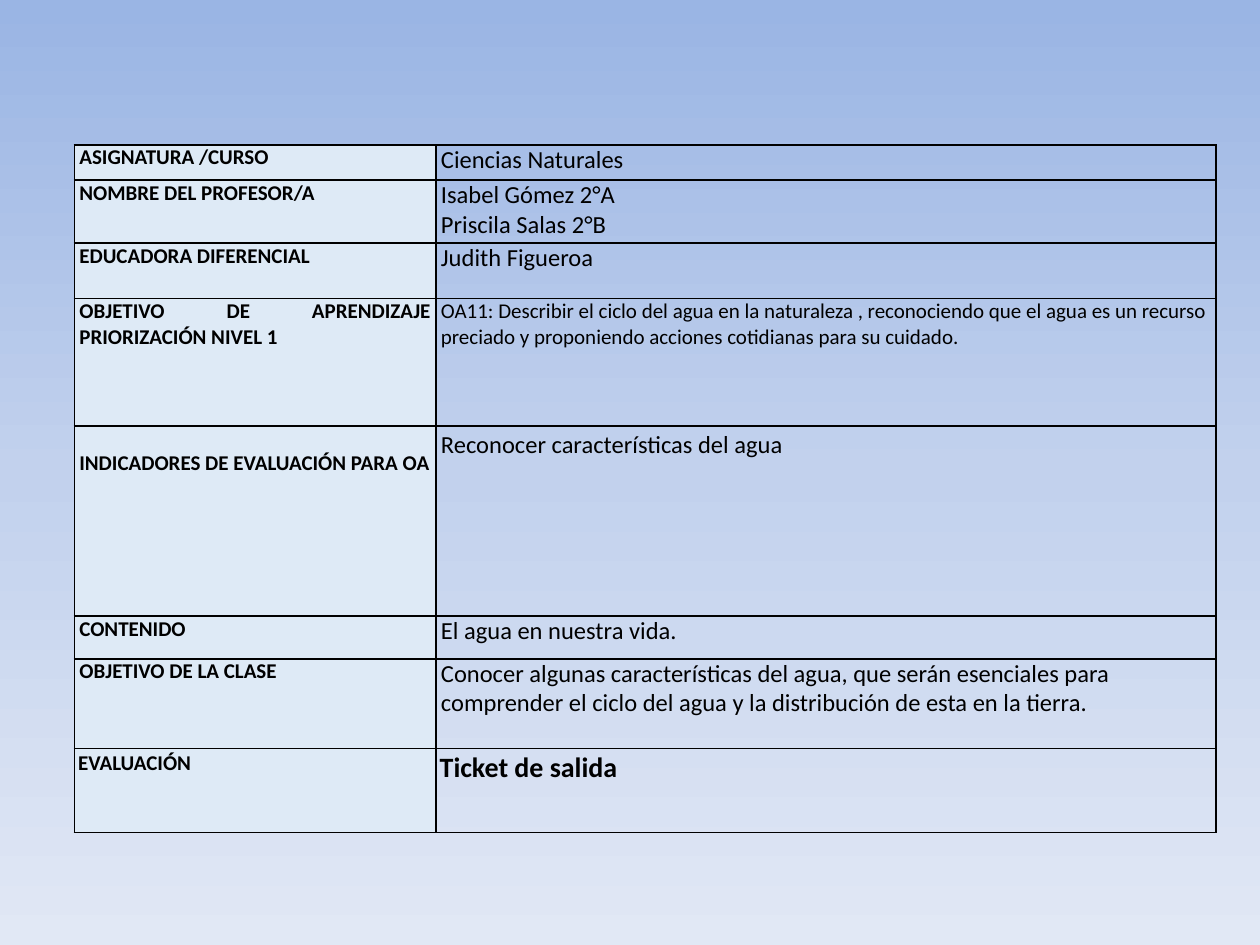
import copy

import pptx
import pptx.dml.color
import pptx.enum.text
import pptx.oxml
import pptx.oxml.ns
import pptx.util

Inches = pptx.util.Inches
JUSTIFY = pptx.enum.text.PP_ALIGN.JUSTIFY
LEFT = pptx.enum.text.PP_ALIGN.LEFT
FONT = "Calibri"
INK = "000000"
LABEL_FILL = "DEEAF6"
COLUMN_WIDTHS = (2.87, 6.19)

# Row height, label, lines of the answer, and what differs in the answer's style
ROWS = [
    (0.28, "ASIGNATURA /CURSO", ["Ciencias Naturales"], {}),
    (0.5, "NOMBRE DEL PROFESOR/A", ["Isabel Gómez 2°A", "Priscila Salas 2°B"], {}),
    (0.44, "EDUCADORA DIFERENCIAL", ["Judith Figueroa"], {}),
    (1.01, "OBJETIVO DE APRENDIZAJE PRIORIZACIÓN NIVEL 1",
     ["OA11: Describir el ciclo del agua en la naturaleza , reconociendo que el agua "
      "es un recurso preciado y proponiendo acciones cotidianas para su cuidado."],
     {"size": 12, "align": LEFT}),
    (1.51, "INDICADORES DE EVALUACIÓN PARA OA", ["Reconocer características del agua"],
     {"align": LEFT, "spacing": 1.15}),
    (0.34, "CONTENIDO", ["El agua en nuestra vida."], {}),
    (0.71, "OBJETIVO DE LA CLASE",
     ["Conocer algunas características del agua, que serán esenciales para "
      "comprender el ciclo del agua y la distribución de esta en la tierra."],
     {"align": LEFT}),
    (0.67, "EVALUACIÓN", ["Ticket de salida"], {"size": 16, "bold": True}),
]
# Cell margins (side, top of label, top of answer) where they are not the usual ones
USUAL_MARGINS = (0.04, 0, 0)
MARGINS = {4: (0.04, 0.2, 0), 7: (0.03, 0.02, 0.02)}


def color(value):
    return pptx.dml.color.RGBColor.from_string(value)


def paint_background(page, colors):
    fill = page.background.fill
    fill.gradient()
    fill.gradient_angle = 270
    stop_list = fill._fill._gradFill.find(pptx.oxml.ns.qn("a:gsLst"))
    stop_list.append(copy.deepcopy(stop_list[-1]))
    for index, (stop, value) in enumerate(zip(fill.gradient_stops, colors)):
        stop.color.rgb = color(value)
        stop.position = index / (len(colors) - 1)


def add_borders(cell):
    properties = cell._tc.get_or_add_tcPr()
    for index, side in enumerate(("lnL", "lnR", "lnT", "lnB")):
        properties.insert(index, pptx.oxml.parse_xml(
            f'<a:{side} {pptx.oxml.ns.nsdecls("a")} w="12700">'
            f'<a:solidFill><a:srgbClr val="{INK}"/></a:solidFill></a:{side}>'))


def fill_cell(cell, lines, margins, size=14, bold=False, align=JUSTIFY,
              spacing=None, fill=None):
    side, top = margins
    cell.margin_left = cell.margin_right = Inches(side)
    cell.margin_top = Inches(top)
    cell.margin_bottom = Inches(0)
    if fill:
        cell.fill.solid()
        cell.fill.fore_color.rgb = color(fill)
    else:
        cell.fill.background()
    add_borders(cell)
    frame = cell.text_frame
    for index, line in enumerate(lines):
        para = frame.add_paragraph() if index else frame.paragraphs[0]
        para.alignment = align
        if spacing:
            para.line_spacing = spacing
        span = para.add_run()
        span.text = line
        span.font.name = FONT
        span.font.size = pptx.util.Pt(size)
        span.font.bold = bold
        span.font.color.rgb = color(INK)


def add_lesson_table(page, left, top, width, height):
    table = page.shapes.add_table(
        len(ROWS), len(COLUMN_WIDTHS), Inches(left), Inches(top),
        Inches(width), Inches(height)).table
    table.first_row = table.horz_banding = False
    for column, column_width in zip(table.columns, COLUMN_WIDTHS):
        column.width = Inches(column_width)
    for index, (row_height, label, answer, style) in enumerate(ROWS):
        table.rows[index].height = Inches(row_height)
        side, label_top, answer_top = MARGINS.get(index, USUAL_MARGINS)
        fill_cell(table.cell(index, 0), [label], (side, label_top),
                  size=12, bold=True, fill=LABEL_FILL)
        fill_cell(table.cell(index, 1), answer, (side, answer_top), **style)


def main():
    deck = pptx.Presentation()
    deck.slide_width = Inches(10)
    deck.slide_height = Inches(7.5)
    page = deck.slides.add_slide(deck.slide_layouts[6])
    paint_background(page, ("9AB5E4", "C2D1ED", "E1E8F5"))
    add_lesson_table(page, 0.59, 1.15, sum(COLUMN_WIDTHS), sum(row[0] for row in ROWS))
    deck.save("out.pptx")


if __name__ == "__main__":
    main()
